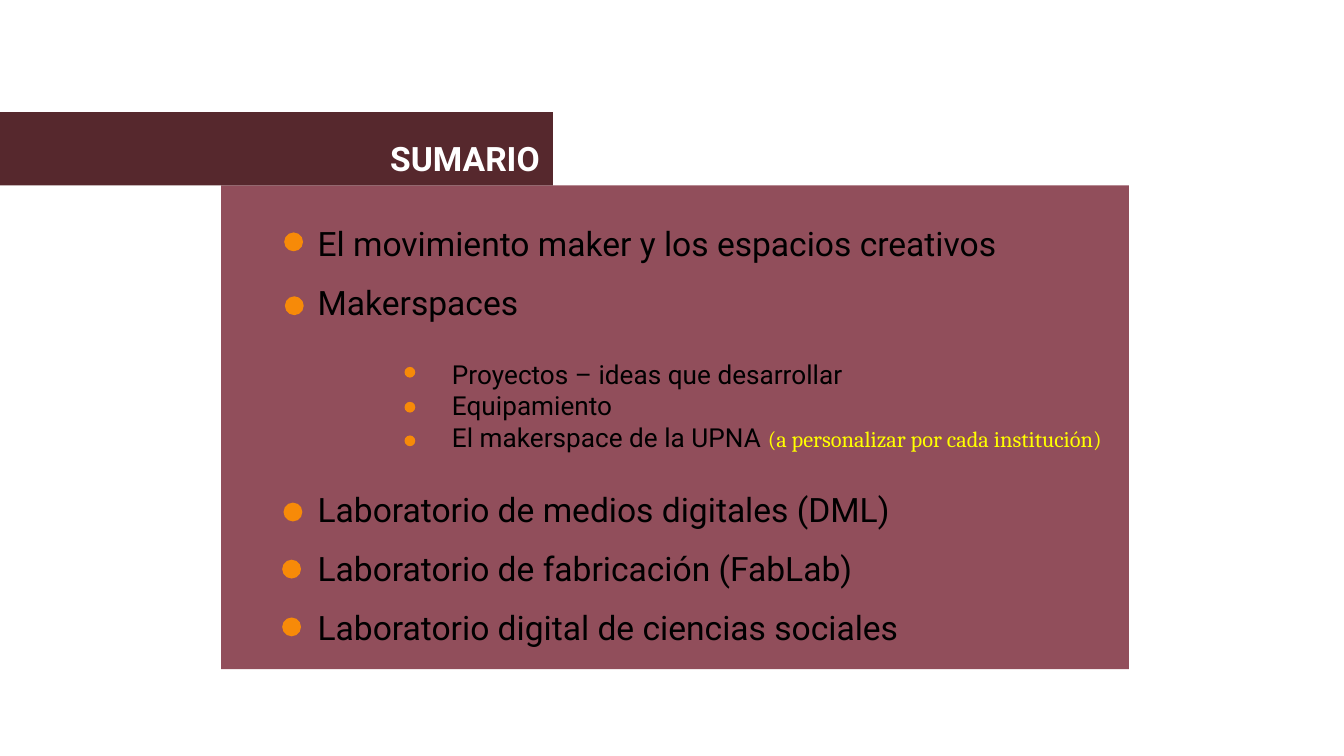
from dataclasses import dataclass

import pptx
import pptx.dml.color
import pptx.enum.shapes
import pptx.enum.text
import pptx.util

EMU_PER_PX = 4572  # 200 px to the inch
SHAPE = pptx.enum.shapes.MSO_SHAPE
ALIGN = pptx.enum.text.PP_ALIGN

PLUM, ROSE, ORANGE = "56282D", "914E5B", "F78A08"
WHITE, BLACK, YELLOW = "FFFFFF", "000000", "FFFF00"
ITEM_INDENT, SUBITEM_INDENT = 30, 230
ITEM_GAP, GROUP_GAP = 10, 19.4


@dataclass
class Box:
    left: int
    top: int
    width: int
    height: int


@dataclass
class TextRun:
    text: str
    size: int
    color: str = BLACK
    font: str = "Roboto"
    bold: bool = False


@dataclass
class Line:
    runs: list[TextRun]
    indent: int = 0
    space_before: float = 0
    alignment: ALIGN = ALIGN.LEFT


def px(length: int) -> pptx.util.Emu:
    return pptx.util.Emu(length * EMU_PER_PX)


def rgb(color: str) -> pptx.dml.color.RGBColor:
    return pptx.dml.color.RGBColor.from_string(color)


def place(box: Box) -> list:
    return [px(length) for length in (box.left, box.top, box.width, box.height)]


def set_all(target, values: dict) -> None:
    for name, value in values.items():
        setattr(target, name, value)


def add_filled(slide, kind: SHAPE, box: Box, color: str) -> None:
    shape = slide.shapes.add_shape(kind, *place(box))
    shape.shadow.inherit = False
    shape.fill.solid()
    shape.fill.fore_color.rgb = rgb(color)
    shape.line.fill.background()


def add_dot(slide, left: int, top: int, size: int) -> None:
    add_filled(slide, SHAPE.OVAL, Box(left, top, size, size), ORANGE)


def add_text(slide, box: Box, lines: list[Line], insets: dict) -> None:
    frame = slide.shapes.add_textbox(*place(box)).text_frame
    set_all(frame, {"word_wrap": True,
                    "vertical_anchor": pptx.enum.text.MSO_ANCHOR.TOP})
    set_all(frame, {f"margin_{side}": px(inset) for side, inset in insets.items()})
    for index, line in enumerate(lines):
        paragraph = frame.add_paragraph() if index else frame.paragraphs[0]
        paragraph.alignment = line.alignment
        if line.space_before:
            paragraph.space_before = pptx.util.Pt(line.space_before)
        if line.indent:
            properties = paragraph._p.get_or_add_pPr()
            properties.set("marL", str(px(line.indent)))
            properties.set("indent", "0")
        for text_run in line.runs:
            run = paragraph.add_run()
            run.text = text_run.text
            set_all(run.font, {"size": pptx.util.Pt(text_run.size),
                               "name": text_run.font, "bold": text_run.bold})
            run.font.color.rgb = rgb(text_run.color)


def item(text: str, space_before: float = ITEM_GAP) -> Line:
    return Line([TextRun(text, 18)], ITEM_INDENT, space_before)


def subitem(text: str, *extra: TextRun, space_before: float = 0) -> Line:
    return Line([TextRun(text, 14), *extra], SUBITEM_INDENT, space_before)


def main() -> None:
    presentation = pptx.Presentation()
    set_all(presentation, {"slide_width": px(2000), "slide_height": px(1125)})
    slide = presentation.slides.add_slide(presentation.slide_layouts[6])

    # Panel and title band
    add_filled(slide, SHAPE.RECTANGLE, Box(329, 276, 1351, 720), ROSE)
    add_filled(slide, SHAPE.RECTANGLE, Box(0, 167, 823, 109), PLUM)
    title = TextRun("SUMARIO", 18, WHITE, bold=True)
    add_text(slide, Box(360, 185, 463, 72), [Line([title], alignment=ALIGN.RIGHT)],
             {"left": 20, "top": 20, "right": 20, "bottom": 20})

    # Summary list
    note = TextRun("(a personalizar por cada institución)", 12, YELLOW, "Cambria")
    lines = [
        item("El movimiento maker y los espacios creativos", space_before=0),
        item("Makerspaces"),
        subitem("Proyectos – ideas que desarrollar", space_before=GROUP_GAP),
        subitem("Equipamiento"),
        subitem("El makerspace de la UPNA ", note),
        item("Laboratorio de medios digitales (DML)", space_before=GROUP_GAP),
        item("Laboratorio de fabricación (FabLab)"),
        item("Laboratorio digital de ciencias sociales"),
    ]
    add_text(slide, Box(423, 322, 1237, 748), lines,
             {"left": 20, "top": 10, "right": 0, "bottom": 10})

    # Dots beside the items and subitems
    for left, top in ((423, 346), (424, 441), (422, 748), (420, 833), (420, 919)):
        add_dot(slide, left, top, 28)
    for top in (546, 598, 648):
        add_dot(slide, 602, top, 16)

    presentation.save("out.pptx")


if __name__ == "__main__":
    main()
